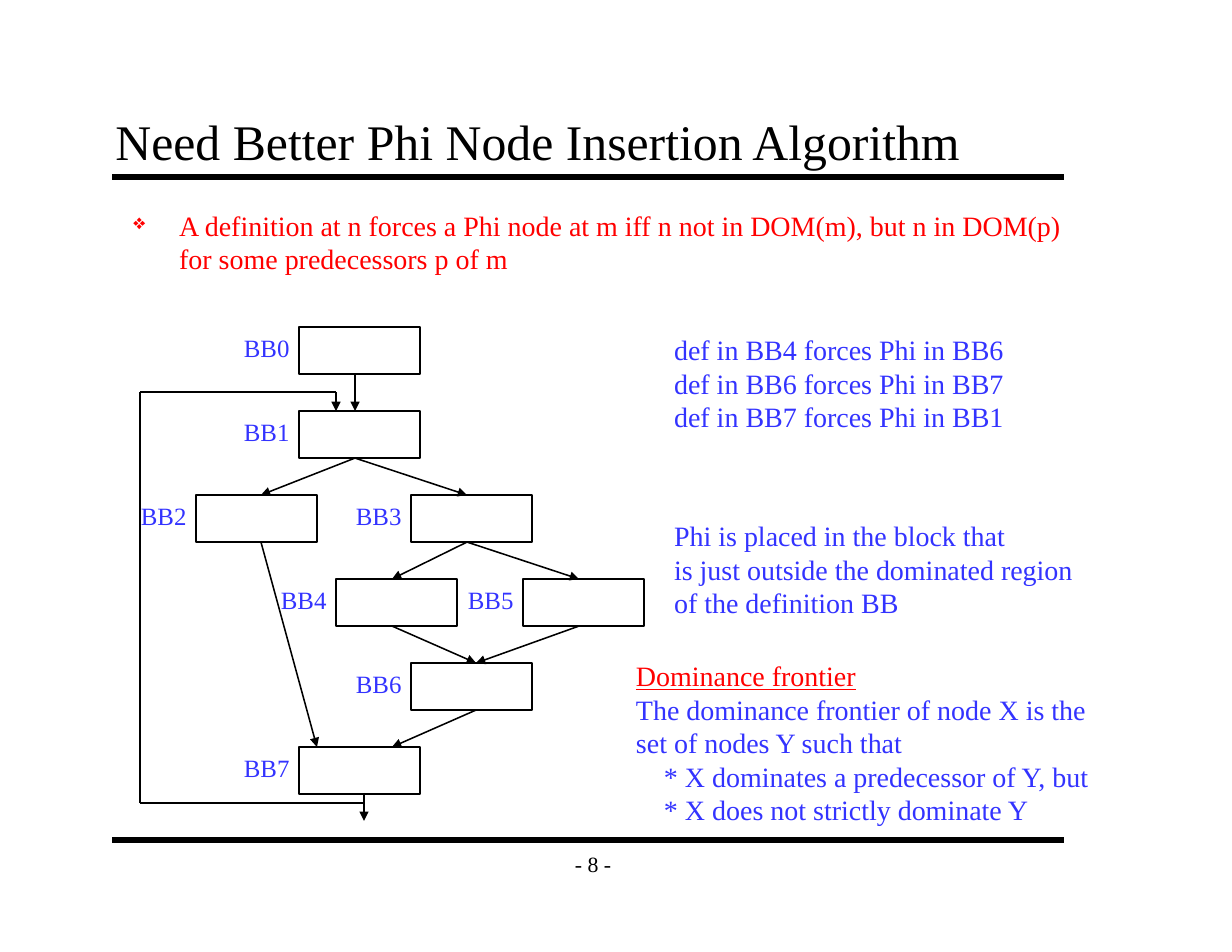
from dataclasses import dataclass

from lxml import etree
from pptx import Presentation
from pptx import util as u
from pptx.dml import color
from pptx.enum import shapes, text
from pptx.oxml import ns


@dataclass(frozen=True)
class Theme:
    font: str = "Times New Roman"
    black: str = "000000"
    red: str = "FF0000"
    blue: str = "3333FF"
    title: int = 32
    body: int = 18
    label: int = 16
    foot: int = 14
    thin: int = 1
    thick: int = 4


THEME = Theme()
WIDE, HIGH = 1.08, 0.42
TOP, STEP = 2.92, 0.75
BLOCKS = [
    ("BB0", 2.67, 0),
    ("BB1", 2.67, 1),
    ("BB2", 1.75, 2),
    ("BB3", 3.67, 2),
    ("BB4", 3, 3),
    ("BB5", 4.67, 3),
    ("BB6", 3.67, 4),
    ("BB7", 2.67, 5),
]
EDGES = [
    (3.17, 0, 3.17, 1),
    (3.17, 1, 2.33, 2),
    (3.17, 1, 4.17, 2),
    (4.17, 2, 3.5, 3),
    (4.17, 2, 5.17, 3),
    (3.5, 3, 4.25, 4),
    (5.17, 3, 4.25, 4),
    (4.25, 4, 3.5, 5),
    (2.33, 2, 2.83, 5),
]
LOOP = [(3.25, 7.17), (1.25, 7.17), (1.25, 3.5), (3, 3.5), (3, 3.67)]
FORCES = [
    "def in BB4 forces Phi in BB6",
    "def in BB6 forces Phi in BB7",
    "def in BB7 forces Phi in BB1",
]
PLACED = [
    "Phi is placed in the block that",
    "is just outside the dominated region",
    "of the definition BB",
]
MEANING = ["The dominance frontier of node X is the", "set of nodes Y such that"]
RULES = ["* X dominates a predecessor of Y, but", "* X does not strictly dominate Y"]


def row_top(row):
    return TOP + STEP * row


def add_run(para, words, size, hue, under=None):
    run = para.add_run()
    run.text = words
    font = run.font
    font.name, font.size, font.underline = THEME.font, u.Pt(size), under
    font.color.rgb = color.RGBColor.from_string(hue)


def set_frame(frame, wrap, anchor, side=0.1, edge=0.05):
    frame.word_wrap = wrap
    frame.vertical_anchor = anchor
    frame.margin_left = frame.margin_right = u.Inches(side)
    frame.margin_top = frame.margin_bottom = u.Inches(edge)


def add_box(slide, place, wrap=False, anchor=text.MSO_ANCHOR.TOP, **pads):
    box = slide.shapes.add_textbox(*map(u.Inches, place))
    set_frame(box.text_frame, wrap, anchor, **pads)
    return box.text_frame


def add_lines(frame, lines, size, hue, indent=0, under=None):
    for words in lines:
        first = frame.paragraphs[0]
        para = frame.add_paragraph() if first.runs else first
        add_run(para, words, size, hue, under)
        if indent:
            para._p.get_or_add_pPr().set("marL", str(u.Inches(indent)))


def add_line(slide, start, end, weight=THEME.thin, arrow=False):
    line = slide.shapes.add_connector(
        shapes.MSO_CONNECTOR.STRAIGHT, *map(u.Inches, (*start, *end)))
    line.line.width = u.Pt(weight)
    line.line.color.rgb = color.RGBColor.from_string(THEME.black)
    if arrow:
        etree.SubElement(line.line._get_or_add_ln(), ns.qn("a:tailEnd"), type="triangle")
    etree.SubElement(line._element.spPr, ns.qn("a:effectLst"))


def add_block(slide, name, left, row):
    top = row_top(row)
    rect = slide.shapes.add_shape(
        shapes.MSO_SHAPE.RECTANGLE, *map(u.Inches, (left, top, WIDE, HIGH)))
    rect.shadow.inherit = False
    rect.fill.background()
    rect.line.width = u.Pt(THEME.thin)
    rect.line.color.rgb = color.RGBColor.from_string(THEME.black)
    frame = add_box(slide, (left - 0.59, top, 0.61, 0.37))
    add_lines(frame, [name], THEME.label, THEME.blue)


def add_graph(slide):
    for block in BLOCKS:
        add_block(slide, *block)
    for left, upper, right, lower in EDGES:
        add_line(slide, (left, row_top(upper) + HIGH), (right, row_top(lower)), arrow=True)
    add_line(slide, (3.25, 7.08), (3.25, 7.33), arrow=True)
    for start, end in zip(LOOP, LOOP[1:]):
        add_line(slide, start, end, arrow=end == LOOP[-1])


def add_title(slide, words):
    title = slide.shapes.title
    title.left, title.top, title.width, title.height = map(u.Inches, (0.92, 0.91, 9.33, 0.67))
    set_frame(title.text_frame, True, text.MSO_ANCHOR.BOTTOM, 0.11, 0.06)
    para = title.text_frame.paragraphs[0]
    para.alignment = text.PP_ALIGN.LEFT
    add_run(para, words, THEME.title, THEME.black)


def add_point(slide, words):
    frame = add_box(slide, (1.08, 1.8, 8.58, 5.7), wrap=True, side=0.11, edge=0.06)
    para = frame.paragraphs[0]
    para.space_before = u.Pt(THEME.body * 0.2)
    add_run(para, words, THEME.body, THEME.red)
    props = para._p.get_or_add_pPr()
    props.set("marL", str(u.Inches(0.41)))
    props.set("indent", str(u.Inches(-0.41)))
    hue = etree.SubElement(props, ns.qn("a:buClr"))
    etree.SubElement(hue, ns.qn("a:srgbClr"), val=THEME.red)
    etree.SubElement(props, ns.qn("a:buSzPct"), val="75000")
    etree.SubElement(props, ns.qn("a:buChar"), char="❖")


def add_notes(slide):
    add_lines(add_box(slide, (5.92, 2.92, 3.15, 1)), FORCES, THEME.body, THEME.blue)
    add_lines(add_box(slide, (5.92, 4.58, 3.76, 1)), PLACED, THEME.body, THEME.blue)
    frame = add_box(slide, (5.58, 5.83, 4.28, 1.6))
    add_lines(frame, ["Dominance frontier"], THEME.body, THEME.red, under=True)
    add_lines(frame, MEANING, THEME.body, THEME.blue)
    add_lines(frame, RULES, THEME.body, THEME.blue, indent=0.25)


def add_foot(slide, words):
    for top in (1.58, 7.5):
        add_line(slide, (1, top), (9.5, top), THEME.thick)
    frame = add_box(slide, (4.92, 7.5, 0.75, 0.42), anchor=text.MSO_ANCHOR.MIDDLE,
                    side=0.11, edge=0.06)
    frame.paragraphs[0].alignment = text.PP_ALIGN.CENTER
    add_lines(frame, [words], THEME.foot, THEME.black)


def main():
    deck = Presentation()
    deck.slide_width, deck.slide_height = u.Inches(11), u.Inches(8.5)
    slide = deck.slides.add_slide(deck.slide_layouts[5])
    add_foot(slide, "- 8 -")
    add_title(slide, "Need Better Phi Node Insertion Algorithm")
    add_point(slide, "A definition at n forces a Phi node at m iff n not in DOM(m), "
                     "but n in DOM(p) for some predecessors p of m")
    add_graph(slide)
    add_notes(slide)
    deck.save("out.pptx")


if __name__ == "__main__":
    main()
